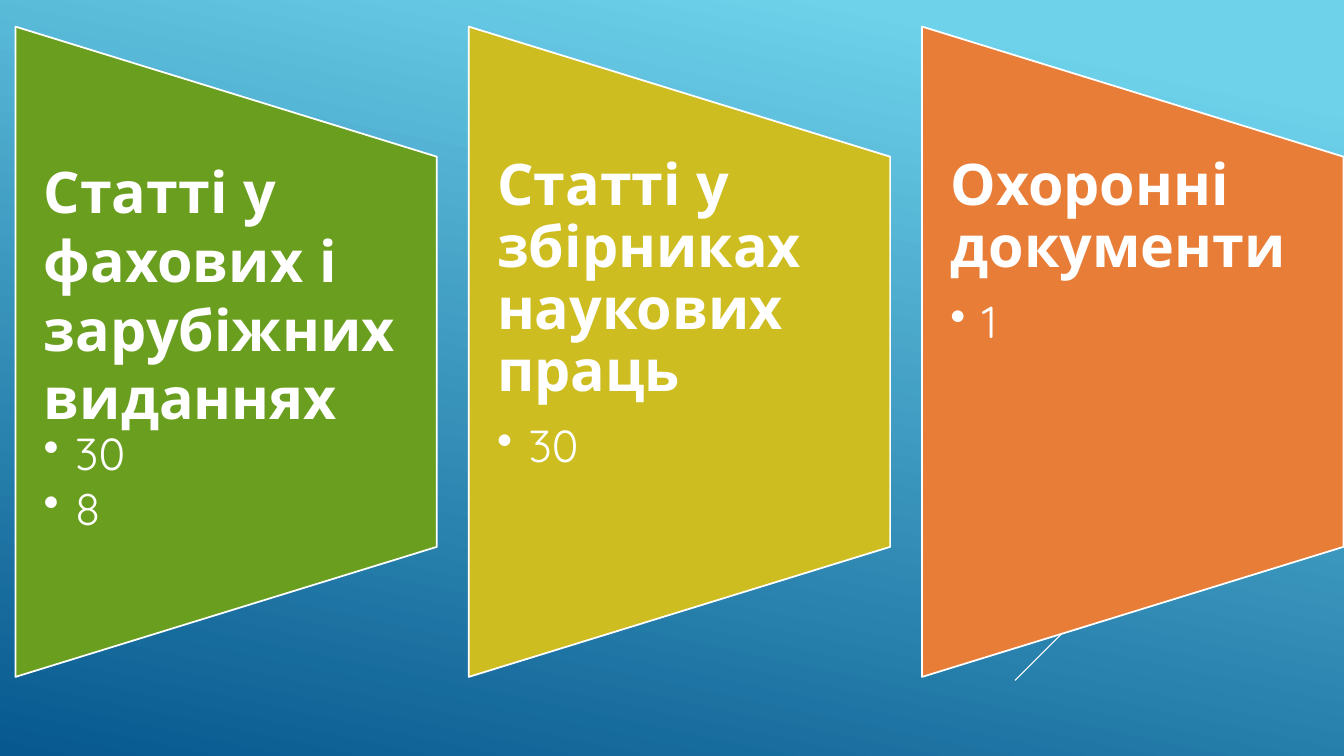
from dataclasses import dataclass

import pptx
import pptx.dml.color
import pptx.enum.shapes
import pptx.enum.text
import pptx.oxml
import pptx.oxml.ns
import pptx.util
from pptx.util import Pt


@dataclass(frozen=True)
class Theme:
    font: str = "Quicksand"
    white: str = "FFFFFF"
    sky: str = "6ED2EB"
    navy: str = "06588E"
    green: str = "6A9E1F"
    yellow: str = "CEBD20"
    orange: str = "E87D37"
    heading_size: int = 41
    bullet_size: int = 32


THEME = Theme()

PANEL_LEFT = 11
PANEL_TOP = 19
PANEL_WIDTH = 301
PANEL_HEIGHT = 464.5
PANEL_PITCH = 323.8
TEXT_TOP = 111.5
TEXT_HEIGHT = 278.7
BULLET_INDENT = 22.5

# Colour, heading paragraphs, heading line spacing and space after, bullets
PANELS = [
    (THEME.green, ["Статті у", "фахових і зарубіжних виданнях"], 1.0, 0, ["30", "8"]),
    (THEME.yellow, ["Статті у збірниках наукових праць"], 0.9, 14.35, ["30"]),
    (THEME.orange, ["Охоронні документи"], 0.9, 14.35, ["1"]),
]


def rgb(value):
    return pptx.dml.color.RGBColor.from_string(value)


def paint_background(slide):
    fill = slide.background.fill
    fill.gradient()
    fill.gradient_angle = 258
    stops = [(0.1, THEME.sky), (1.0, THEME.navy)]
    for stop, (position, color) in zip(fill.gradient_stops, stops):
        stop.position = position
        stop.color.rgb = rgb(color)


def add_line(slide, start, end, width):
    line = slide.shapes.add_connector(
        pptx.enum.shapes.MSO_CONNECTOR.STRAIGHT,
        Pt(start[0]), Pt(start[1]), Pt(end[0]), Pt(end[1]))
    line.line.color.rgb = rgb(THEME.white)
    line.line.width = Pt(width)
    properties = line._element.spPr
    properties.append(pptx.oxml.parse_xml(
        f"<a:effectLst {pptx.oxml.ns.nsdecls('a')}/>"))


def add_panel(slide, left, color):
    # The shape is turned a quarter, so its own width is the panel's height
    shift = (PANEL_HEIGHT - PANEL_WIDTH) / 2
    shape = slide.shapes.add_shape(
        pptx.enum.shapes.MSO_SHAPE.FLOWCHART_MANUAL_OPERATION,
        Pt(left - shift), Pt(PANEL_TOP + shift), Pt(PANEL_HEIGHT), Pt(PANEL_WIDTH))
    shape.rotation = 270
    shape.shadow.inherit = False
    shape.fill.solid()
    shape.fill.fore_color.rgb = rgb(color)
    shape.line.color.rgb = rgb(THEME.white)
    shape.line.width = Pt(1.25)


def style_paragraph(paragraph, size, bold, line_spacing, space_after):
    paragraph.font.name = THEME.font
    paragraph.font.size = Pt(size)
    paragraph.font.bold = bold
    paragraph.font.color.rgb = rgb(THEME.white)
    paragraph.line_spacing = line_spacing
    paragraph.space_after = Pt(space_after)


def add_bullet(paragraph):
    paragraph.level = 1
    properties = paragraph._p.get_or_add_pPr()
    properties.set("marL", str(Pt(BULLET_INDENT)))
    properties.set("indent", str(-Pt(BULLET_INDENT)))
    bullet = pptx.oxml.parse_xml(
        f"<a:buChar {pptx.oxml.ns.nsdecls('a')} char='•'/>")
    properties.insert_element_before(
        bullet, "a:tabLst", "a:defRPr", "a:extLst")


def add_panel_text(slide, left, headings, line_spacing, space_after, bullets):
    box = slide.shapes.add_textbox(
        Pt(left), Pt(TEXT_TOP), Pt(PANEL_WIDTH), Pt(TEXT_HEIGHT))
    frame = box.text_frame
    frame.word_wrap = True
    frame.vertical_anchor = pptx.enum.text.MSO_ANCHOR.TOP
    frame.margin_left, frame.margin_right = Pt(20.2), Pt(20.8)
    frame.margin_top = frame.margin_bottom = 0
    frame.text = "\n".join(headings + bullets)
    for index, paragraph in enumerate(frame.paragraphs):
        if index < len(headings):
            style_paragraph(paragraph, THEME.heading_size, True,
                            line_spacing, space_after)
        else:
            style_paragraph(paragraph, THEME.bullet_size, False, 0.9, 4.8)
            add_bullet(paragraph)


def main():
    presentation = pptx.Presentation()
    presentation.slide_width = Pt(960)
    presentation.slide_height = Pt(540)
    slide = presentation.slides.add_slide(presentation.slide_layouts[6])

    # Background and the diagonal behind the last panel
    paint_background(slide)
    add_line(slide, (960, 251), (725, 486), 0.75)

    # Three panels at an even pitch
    for index, (color, *text) in enumerate(PANELS):
        left = PANEL_LEFT + index * PANEL_PITCH
        add_panel(slide, left, color)
        add_panel_text(slide, left, *text)

    presentation.save("out.pptx")


if __name__ == "__main__":
    main()
